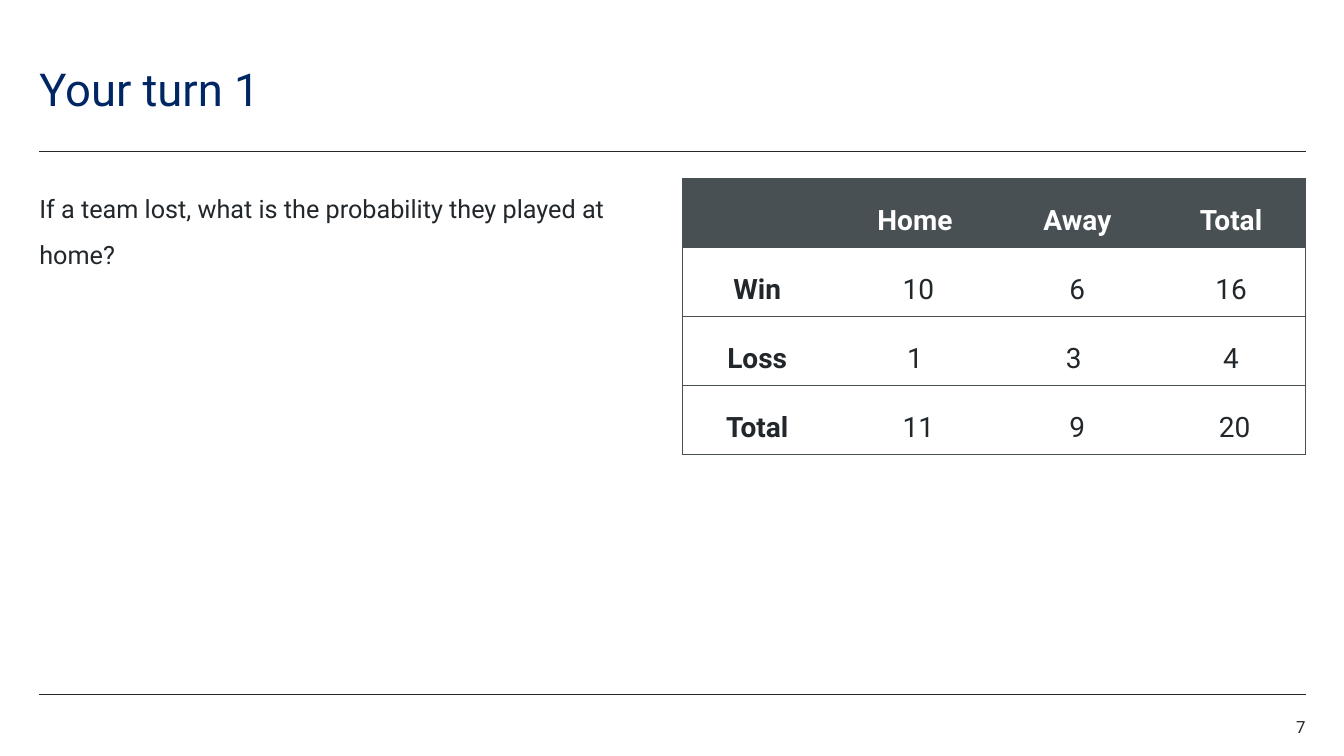
"""Build the "Your turn 1" slide with its win and loss table."""
from lxml import etree
from pptx import Presentation
from pptx.dml.color import RGBColor
from pptx.enum.shapes import MSO_CONNECTOR
from pptx.enum.text import MSO_ANCHOR, PP_ALIGN
from pptx.oxml import parse_xml
from pptx.oxml.ns import nsdecls, qn
from pptx.util import Inches, Pt

LEFT, MID, RIGHT = PP_ALIGN.LEFT, PP_ALIGN.CENTER, PP_ALIGN.RIGHT
CENTRE = MSO_ANCHOR.MIDDLE
LINE = MSO_CONNECTOR.STRAIGHT
NAVY = RGBColor(0x00, 0x26, 0x64)
INK = RGBColor(0x22, 0x27, 0x2B)
SLATE = RGBColor(0x49, 0x50, 0x54)
WHITE = RGBColor(0xFF, 0xFF, 0xFF)

deck = Presentation()
deck.slide_width, deck.slide_height = Inches(13.33), Inches(7.5)
WIDE, HIGH = deck.slide_width / 100, deck.slide_height / 100
slide = deck.slides.add_slide(deck.slide_layouts[6])
START, END = 2.93, 97.15


def place(x, y, w, h):
    """Turn percent shares of the slide into lengths."""
    return int(x * WIDE), int(y * HIGH), int(w * WIDE), int(h * HIGH)


def write(frame, text, size, color, align, gap, after=0, bold=False):
    """Put one styled paragraph in a text frame."""
    frame.word_wrap = True
    para = frame.paragraphs[0]
    look = {"alignment": align, "line_spacing": gap, "space_after": Pt(after)}
    for key, value in look.items():
        setattr(para, key, value)
    run = para.add_run()
    run.text = text
    for key, value in {"name": "Roboto", "size": Pt(size), "bold": bold}.items():
        setattr(run.font, key, value)
    run.font.color.rgb = color


for y in (20, 91.87):
    x1, y1, x2, y2 = place(START, y, END, y)
    rule = slide.shapes.add_connector(LINE, x1, y1, x2, y2)
    rule.line.color.rgb = INK
    rule.line.width = Pt(0.5)
    etree.SubElement(rule._element.spPr, qn("a:effectLst"))

texts = [
    ((START, 5.2, 82.67, 8), "Your turn 1", 32.4, NAVY, LEFT, 1.4, 0),
    ((START, 23.6, 47.04, 66.13),
     "If a team lost, what is the probability they played at home?",
     18, INK, LEFT, 1.5, 12),
    ((91.22, 95.07, 5.93, 2.67), "7", 12, INK, RIGHT, 0.9, 6),
]
for area, *style in texts:
    frame = slide.shapes.add_textbox(*place(*area)).text_frame
    for side in ("left", "top", "right", "bottom"):
        setattr(frame, "margin_" + side, 0)
    write(frame, *style)

rows = [
    ("", "Home", "Away", "Total"),
    ("Win", " 10", "6", "16"),
    ("Loss", "1", "3 ", "4"),
    ("Total", " 11", "9", " 20"),
]
shares = (11.1, 12.38, 11.78, 11.1)
step = 9.13
area = place(END - sum(shares), 23.6, sum(shares), step * len(rows))
table = slide.shapes.add_table(len(rows), len(shares), *area).table
table.horz_banding = False
for col, share in zip(table.columns, shares):
    col.width = int(share * WIDE)
for r, words in enumerate(rows):
    table.rows[r].height = int(step * HIGH)
    for c, word in enumerate(words):
        cell = table.cell(r, c)
        inset = {"margin_left": Inches(0.18), "margin_right": Inches(0.18),
                 "margin_top": 0, "margin_bottom": 0, "vertical_anchor": CENTRE}
        for key, value in inset.items():
            setattr(cell, key, value)
        edges = {"L": c == 0, "R": c == len(shares) - 1, "T": True, "B": True}
        for side, shown in edges.items():
            paint = (f'<a:solidFill><a:srgbClr val="{SLATE}"/></a:solidFill>'
                     if shown else "<a:noFill/>")
            cell._tc.get_or_add_tcPr().append(parse_xml(
                f'<a:ln{side} {nsdecls("a")} w="{Pt(0.5)}">{paint}</a:ln{side}>'))
        if r == 0:
            cell.fill.solid()
            cell.fill.fore_color.rgb = SLATE
        else:
            cell.fill.background()
        if word:
            write(cell.text_frame, word, 20, INK if r else WHITE, MID, 1.5, 6,
                  r == 0 or c == 0)

deck.save("out.pptx")
